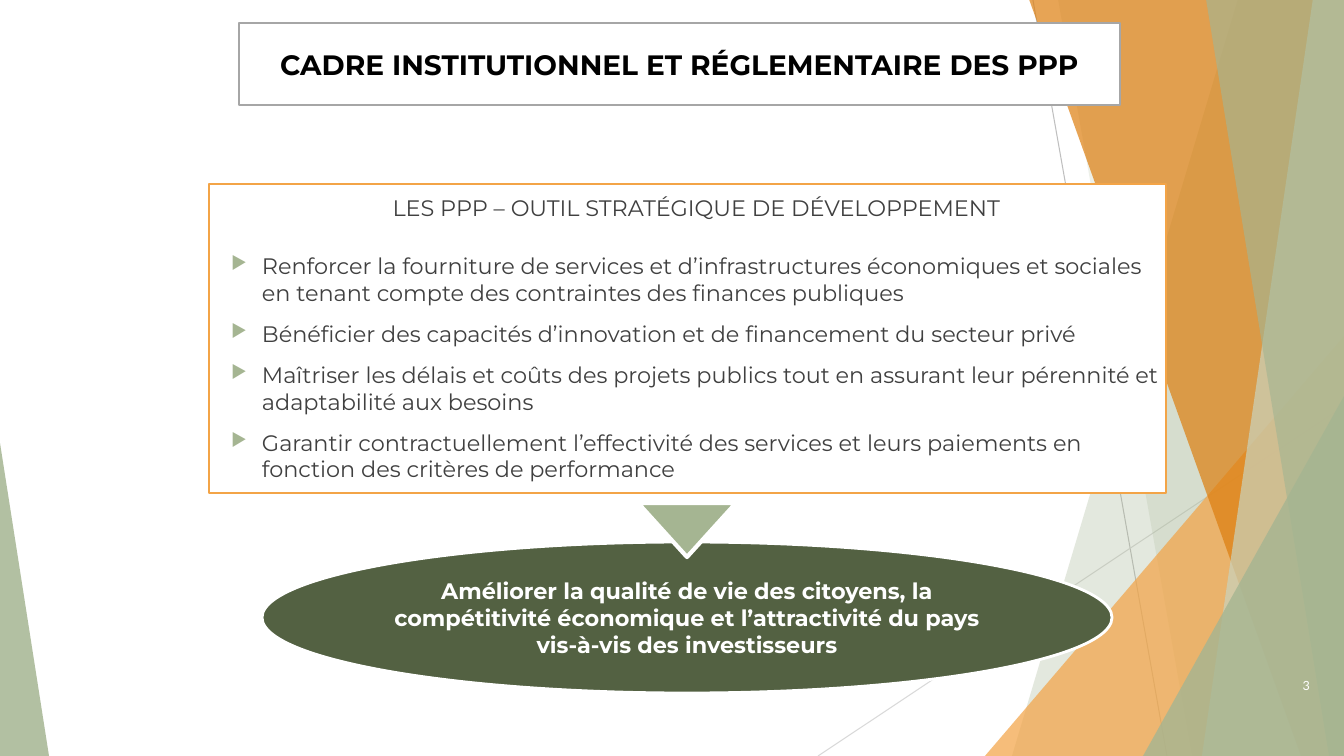
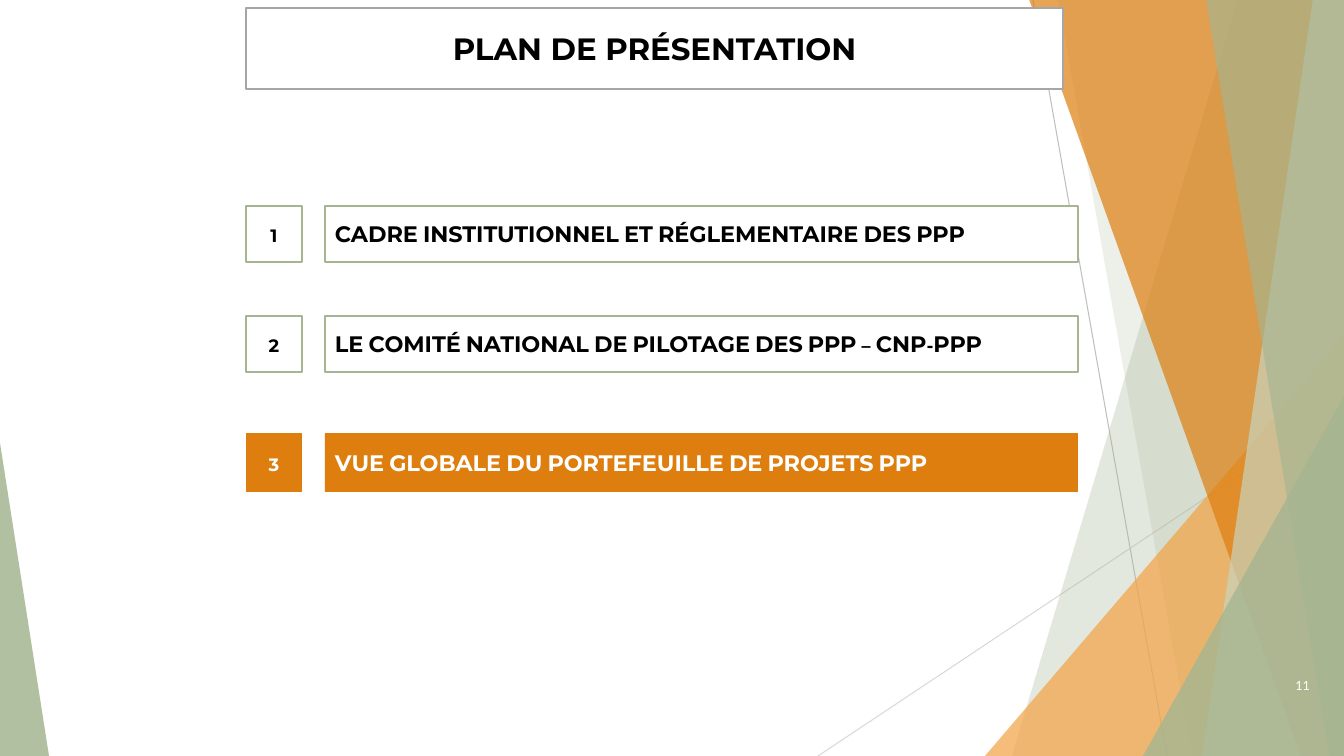
import lxml.etree
import pptx
import pptx.dml.color
import pptx.enum.shapes
import pptx.enum.text
import pptx.oxml.ns
import pptx.util

WIDTH, HEIGHT = 1344, 756
EMU_PER_PX = 914400 / 100.8

WHITE, BLACK, TEXT = "FFFFFF", "000000", "404040"
SAGE, PALE_SAGE, OLIVE = "A5B592", "C9D3BE", "536142"
AMBER, ORANGE = "F3A447", "DD7E0E"
TITLE_LINE = "A6A6A6"
FONT, NUMBER_FONT = "Montserrat", "Lato"

SHAPES = pptx.enum.shapes.MSO_SHAPE
ALIGN = pptx.enum.text.PP_ALIGN
INSETS = (10, 5, 10, 5)

THIN_LINES = [((1033, 0), (1167, HEIGHT), "BFBFBF"),
              ((WIDTH, 406), (818, HEIGHT), "D9D9D9")]
DECORATION = [
    ("band", (1238, 1012), SAGE, 30),
    ("band", (1058, 1192), SAGE, 20),
    ("triangle", (985, 336, 359, 1), AMBER, 72),
    ("band", (1029, 1301), ORANGE, 70),
    ("band", (1313, 1202), PALE_SAGE, 70),
    ("band", (1206, 1329), SAGE, 65),
    ("triangle", (1143, 396, 201, 1), SAGE, 80),
    ("triangle", (0, 443, 49, 0), SAGE, 85),
]

GOALS_HEADING = "LES PPP – OUTIL STRATÉGIQUE DE DÉVELOPPEMENT"
GOALS = [
    "Renforcer la fourniture de services et d’infrastructures économiques et sociales en tenant compte des contraintes des finances publiques",
    "Bénéficier des capacités d’innovation et de financement du secteur privé",
    "Maîtriser les délais et coûts des projets publics tout en assurant leur pérennité et adaptabilité aux besoins",
    "Garantir contractuellement l’effectivité des services et leurs paiements en fonction des critères de performance",
]
OUTCOME = ("Améliorer la qualité de vie des citoyens, la compétitivité économique "
           "et l’attractivité du pays vis-à-vis des investisseurs")

AGENDA = [
    ("CADRE INSTITUTIONNEL ET RÉGLEMENTAIRE DES PPP", 206, 56),
    ("LE COMITÉ NATIONAL DE PILOTAGE DES PPP – CNP-PPP", 316, 56),
    ("VUE GLOBALE DU PORTEFEUILLE DE PROJETS PPP", 433, 59),
]
CURRENT_ITEM = 3


def px(value):
    return pptx.util.Emu(round(value * EMU_PER_PX))


def color(code):
    return pptx.dml.color.RGBColor.from_string(code)


def add_xml(parent, tag, **attributes):
    return lxml.etree.SubElement(parent, pptx.oxml.ns.qn(tag), attributes)


def style_shape(shape, fill, line=None, line_width=1.5, opacity=100):
    shape.shadow.inherit = False
    shape.fill.solid()
    shape.fill.fore_color.rgb = color(fill)
    if opacity < 100:
        fill_color = next(shape._element.spPr.iter(pptx.oxml.ns.qn("a:srgbClr")))
        add_xml(fill_color, "a:alpha", val=str(opacity * 1000))
    if line:
        shape.line.color.rgb = color(line)
        shape.line.width = pptx.util.Pt(line_width)
    else:
        shape.line.fill.background()


def add_box(slide, kind, bounds, fill, line=None, line_width=1.5, opacity=100):
    shape = slide.shapes.add_shape(kind, *map(px, bounds))
    style_shape(shape, fill, line, line_width, opacity)
    return shape


def prepare_frame(shape, insets=INSETS):
    frame = shape.text_frame
    frame.word_wrap = True
    frame.vertical_anchor = pptx.enum.text.MSO_ANCHOR.MIDDLE
    frame.margin_left, frame.margin_top, frame.margin_right, frame.margin_bottom = map(px, insets)
    return frame


def write(paragraph, text, size, text_color, align=ALIGN.LEFT, bold=False,
          font=FONT, small_caps=False):
    paragraph.alignment = align
    run = paragraph.add_run()
    run.text = text
    run.font.name = font
    run.font.size = pptx.util.Pt(size)
    run.font.bold = bold
    run.font.color.rgb = color(text_color)
    if small_caps:
        run.font._element.set("cap", "small")


def indent(paragraph, left, first=0):
    properties = paragraph._p.get_or_add_pPr()
    properties.set("marL", str(px(left)))
    properties.set("indent", str(px(first)))
    return properties


def add_bullet(paragraph):
    properties = indent(paragraph, 49, -31)
    add_xml(add_xml(properties, "a:buClr"), "a:srgbClr", val=SAGE)
    add_xml(properties, "a:buSzPct", val="80000")
    add_xml(properties, "a:buChar", char="▶")


def add_band(slide, top_x, bottom_x, fill, opacity):
    builder = slide.shapes.build_freeform(px(top_x), px(-1), scale=1.0)
    corners = [(WIDTH, -1), (WIDTH, HEIGHT), (bottom_x, HEIGHT)]
    builder.add_line_segments([(px(x), px(y)) for x, y in corners], close=True)
    style_shape(builder.convert_to_shape(), fill, opacity=opacity)


def add_decoration(slide):
    for start, end, line_color in THIN_LINES:
        connector = slide.shapes.add_connector(
            pptx.enum.shapes.MSO_CONNECTOR.STRAIGHT, *map(px, start + end))
        connector.line.color.rgb = color(line_color)
        connector.line.width = pptx.util.Pt(0.75)
        add_xml(connector._element.spPr, "a:effectLst")
    for kind, geometry, fill, opacity in DECORATION:
        if kind == "band":
            add_band(slide, *geometry, fill, opacity)
        else:
            left, top, width, apex = geometry
            triangle = add_box(slide, SHAPES.ISOSCELES_TRIANGLE,
                               (left, top, width, HEIGHT - top), fill, opacity=opacity)
            triangle.adjustments[0] = apex


def add_slide(presentation, title, title_bounds, title_size, number):
    slide = presentation.slides.add_slide(presentation.slide_layouts[6])
    add_decoration(slide)
    title_box = add_box(slide, SHAPES.RECTANGLE, title_bounds, WHITE, TITLE_LINE)
    write(prepare_frame(title_box).paragraphs[0], title, title_size, BLACK,
          ALIGN.CENTER, bold=True)
    number_box = slide.shapes.add_textbox(*map(px, (1244, 666, 76, 40)))
    write(prepare_frame(number_box).paragraphs[0], number, 9, WHITE,
          ALIGN.RIGHT, font=NUMBER_FONT)
    return slide


def add_goals(slide):
    box = add_box(slide, SHAPES.RECTANGLE, (209, 184, 957, 309), WHITE, AMBER)
    frame = prepare_frame(box, (4, 8, 4, 8))
    heading = frame.paragraphs[0]
    indent(heading, 18)
    heading.space_after = pptx.util.Pt(12)
    write(heading, GOALS_HEADING, 16, TEXT, ALIGN.CENTER)
    for goal in GOALS:
        paragraph = frame.add_paragraph()
        add_bullet(paragraph)
        paragraph.space_before = pptx.util.Pt(10)
        write(paragraph, goal, 16, TEXT)


def add_outcome(slide):
    ellipse = add_box(slide, SHAPES.OVAL, (262, 542, 850, 151), OLIVE, WHITE, 2)
    write(prepare_frame(ellipse, (4, 5, 4, 5)).paragraphs[0], OUTCOME, 16, WHITE,
          ALIGN.CENTER, bold=True)
    add_box(slide, SHAPES.FLOWCHART_MERGE, (638, 503, 98, 54), SAGE, WHITE, 3)


def add_agenda(slide):
    for number, (label, top, height) in enumerate(AGENDA, 1):
        if number == CURRENT_ITEM:
            fill, line, text_color = ORANGE, None, WHITE
        else:
            fill, line, text_color = WHITE, SAGE, BLACK
        cells = [(246, 56, str(number), ALIGN.CENTER), (325, 753, label, ALIGN.LEFT)]
        for left, width, text, align in cells:
            box = add_box(slide, SHAPES.RECTANGLE, (left, top, width, height), fill, line)
            write(prepare_frame(box).paragraphs[0], text, 16, text_color, align,
                  bold=True, small_caps=True)


def main():
    presentation = pptx.Presentation()
    presentation.slide_width, presentation.slide_height = px(WIDTH), px(HEIGHT)
    framework = add_slide(presentation, "CADRE INSTITUTIONNEL ET RÉGLEMENTAIRE DES PPP",
                          (239, 23, 881, 82), 20, "3")
    add_goals(framework)
    add_outcome(framework)
    plan = add_slide(presentation, "PLAN DE PRÉSENTATION", (246, 8, 817, 81), 22, "11")
    add_agenda(plan)
    presentation.save("out.pptx")


if __name__ == "__main__":
    main()
